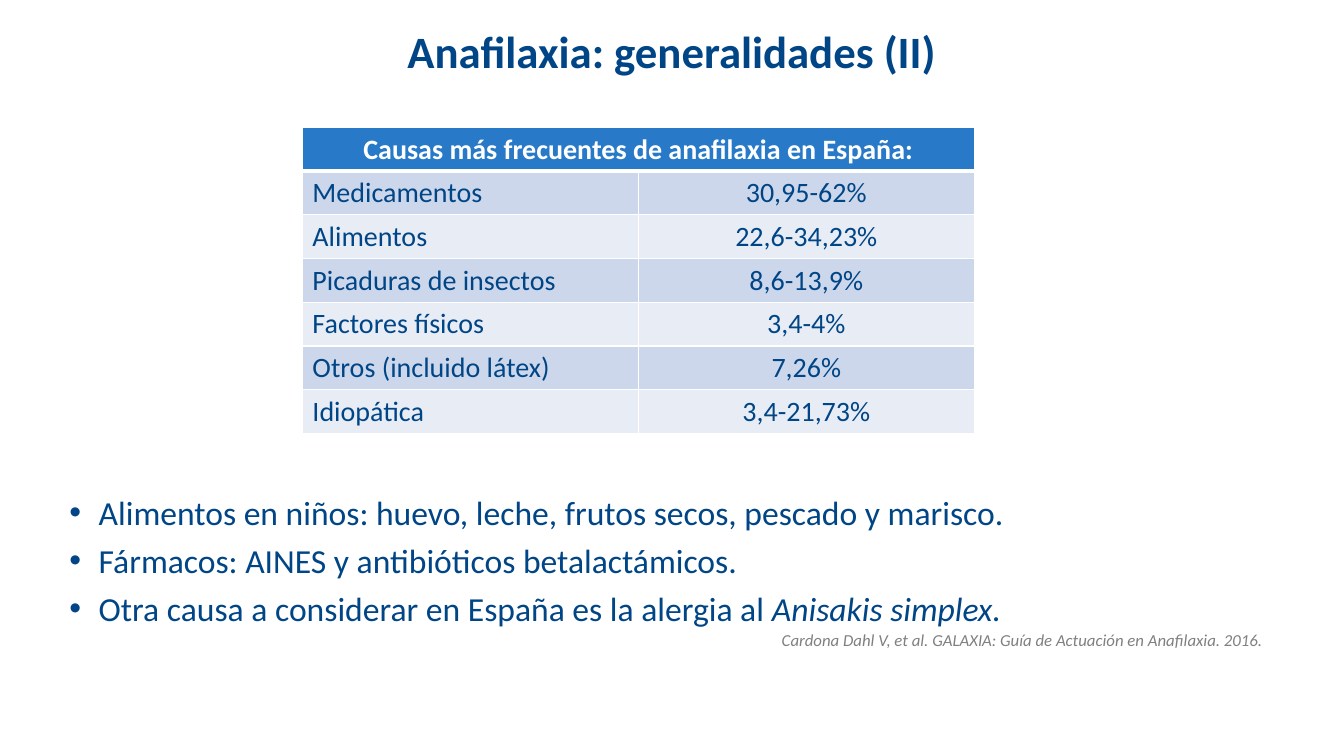
from lxml.etree import SubElement
from pptx import Presentation
from pptx.dml.color import RGBColor
from pptx.enum.text import MSO_ANCHOR, PP_ALIGN
from pptx.oxml.ns import qn
from pptx.util import Pt

COLORS = {"navy": "004586", "blue": "287AC8", "dark_band": "CDD7EB",
          "light_band": "E8ECF5", "white": "FFFFFF", "gray": "808080"}
CAUSES = [
    ("Medicamentos", "30,95-62%"),
    ("Alimentos", "22,6-34,23%"),
    ("Picaduras de insectos", "8,6-13,9%"),
    ("Factores físicos", "3,4-4%"),
    ("Otros (incluido látex)", "7,26%"),
    ("Idiopática", "3,4-21,73%"),
]
NOTES = [
    [("Alimentos en niños: huevo, leche, frutos secos, pescado y marisco.", False)],
    [("Fármacos: AINES y antibióticos betalactámicos.", False)],
    [("Otra causa a considerar en España es la alergia al ", False),
     ("Anisakis simplex.", True)],
]


def style_font(font, size, color, bold=False, italic=False):
    """Set the typeface, size, colour and weight of a font."""
    font.name = "Calibri"
    font.size = Pt(size)
    font.bold = bold
    font.italic = italic
    font.color.rgb = RGBColor.from_string(COLORS[color])


def add_box(page, left, top, width, height):
    """Add a wrapping text box and return its text frame."""
    frame = page.shapes.add_textbox(Pt(left), Pt(top), Pt(width), Pt(height)).text_frame
    frame.word_wrap = True
    return frame


def add_line(page, text, area, align, size, color, bold=False, italic=False):
    """Add a vertically centred box holding one line of text."""
    frame = add_box(page, *area)
    frame.vertical_anchor = MSO_ANCHOR.MIDDLE
    para = frame.paragraphs[0]
    para.text = text
    para.alignment = align
    style_font(para.font, size, color, bold, italic)


def add_bullets(page, notes, area):
    """Add a bulleted list whose paragraphs are lists of text and italic pairs."""
    frame = add_box(page, *area)
    for index, spans in enumerate(notes):
        para = frame.add_paragraph() if index else frame.paragraphs[0]
        para.alignment = PP_ALIGN.JUSTIFY
        if index:
            para.space_before = Pt(5.4)
        properties = para._p.get_or_add_pPr()
        properties.set("marL", str(Pt(63.4)))
        properties.set("indent", str(Pt(-21)))
        SubElement(properties, qn("a:buFont"), typeface="Arial")
        SubElement(properties, qn("a:buChar"), char="•")
        style_font(para.font, 24, "navy")
        for text, italic in spans:
            span = para.add_run()
            span.text = text
            if italic:
                span.font.italic = True


def set_borders(cell, bottom):
    """Draw white borders around a cell, with the given bottom width."""
    properties = cell._tc.get_or_add_tcPr()
    for side, width in (("L", 1), ("R", 1), ("T", 1), ("B", bottom)):
        line = SubElement(properties, qn(f"a:ln{side}"), w=str(Pt(width)))
        fill = SubElement(line, qn("a:solidFill"))
        SubElement(fill, qn("a:srgbClr"), val=COLORS["white"])


def fill_cell(cell, text, align, fill, color, bold=False, bottom=1):
    """Write and colour one table cell."""
    set_borders(cell, bottom)
    cell.fill.solid()
    cell.fill.fore_color.rgb = RGBColor.from_string(COLORS[fill])
    para = cell.text_frame.paragraphs[0]
    para.text = text
    para.alignment = align
    style_font(para.font, 20, color, bold)


def add_causes_table(page, heading, causes):
    """Add the two-column table of causes under a merged heading."""
    row_count = len(causes) + 1
    table = page.shapes.add_table(row_count, 2, Pt(216), Pt(90.9),
                                  Pt(480), Pt(31.2 * row_count)).table
    table.cell(0, 0).merge(table.cell(0, 1))
    for column, text in enumerate((heading, "")):
        fill_cell(table.cell(0, column), text, PP_ALIGN.CENTER, "blue", "white", True, 3)
    for row, values in enumerate(causes, 1):
        band = "dark_band" if row % 2 else "light_band"
        for column, align in enumerate((PP_ALIGN.LEFT, PP_ALIGN.CENTER)):
            fill_cell(table.cell(row, column), values[column], align, band, "navy")


def main():
    """Build and save the slide."""
    deck = Presentation()
    deck.slide_width, deck.slide_height = Pt(960), Pt(540)
    page = deck.slides.add_slide(deck.slide_layouts[6])
    add_line(page, "Anafilaxia: generalidades (II)", (48, 12.2, 864, 47.5),
             PP_ALIGN.CENTER, 32, "navy", bold=True)
    add_bullets(page, NOTES, (0, 348, 912, 101))
    add_line(page, "Cardona Dahl V, et al. GALAXIA: Guía de Actuación en Anafilaxia. 2016. ",
             (0, 445.7, 912, 23), PP_ALIGN.RIGHT, 12, "gray", italic=True)
    add_causes_table(page, "Causas más frecuentes de anafilaxia en España:", CAUSES)
    deck.save("out.pptx")


if __name__ == "__main__":
    main()
